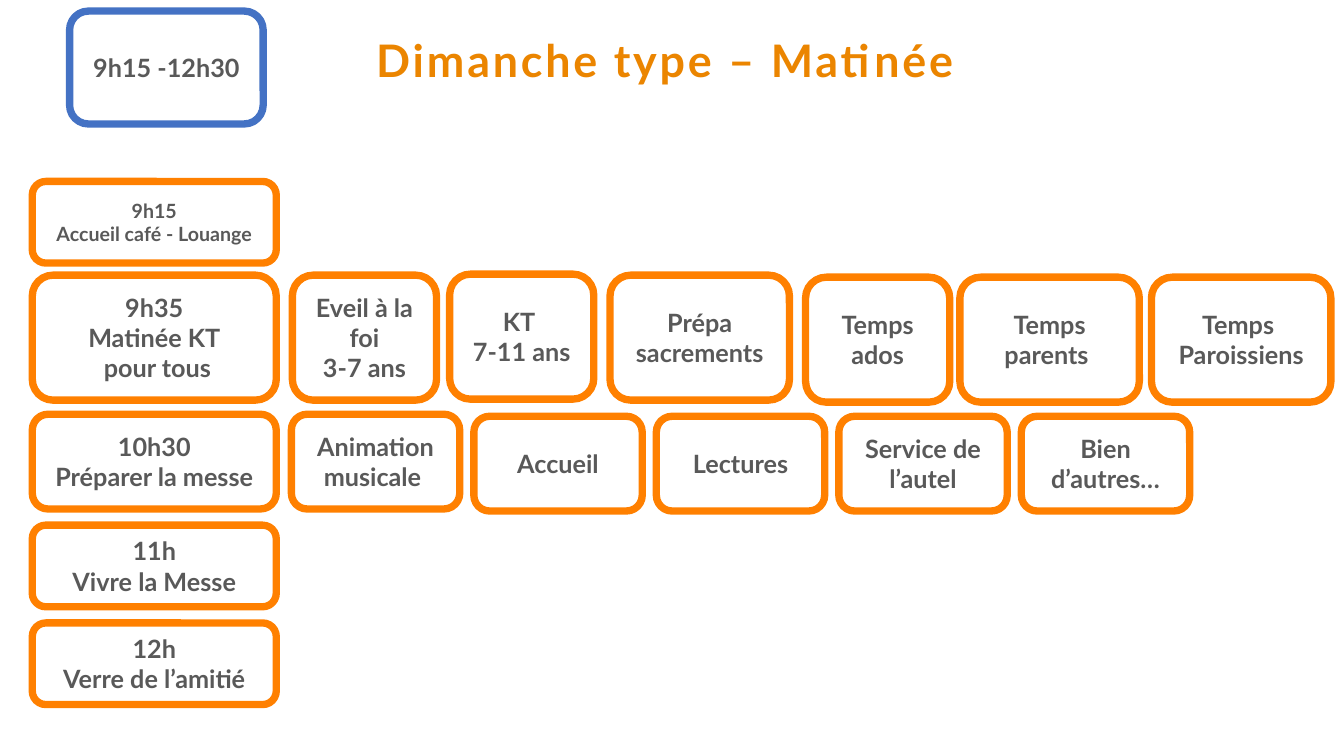
from pptx import Presentation
from pptx.dml.color import RGBColor
from pptx.enum.shapes import MSO_SHAPE
from pptx.enum.text import MSO_ANCHOR, MSO_AUTO_SIZE, PP_ALIGN
from pptx.util import Emu, Pt

PX = 9144
COLORS = {"title": "EB8500", "text": "595959", "blue": "4472C4", "orange": "FF8000"}


class Board:
    font = "Lato"
    border = Pt(5.25)

    def __init__(self, deck):
        self.slide = deck.slides.add_slide(deck.slide_layouts[5])

    def color(self, name):
        return RGBColor.from_string(COLORS[name])

    def label(self, frame, text, size, color):
        frame.text = text
        for para in frame.paragraphs:
            para.alignment = PP_ALIGN.CENTER
            for run in para.runs:
                run.font.name = self.font
                run.font.size = Pt(size)
                run.font.bold = True
                run.font.color.rgb = self.color(color)

    def title(self, text, x, y, w, h):
        shape = self.slide.shapes.title
        shape.left, shape.top, shape.width, shape.height = (Emu(n * PX) for n in (x, y, w, h))
        frame = shape.text_frame
        frame.word_wrap = True
        frame.auto_size = MSO_AUTO_SIZE.SHAPE_TO_FIT_TEXT
        frame.vertical_anchor = MSO_ANCHOR.TOP
        self.label(frame, text, 32, "title")
        para = frame.paragraphs[0]
        para.line_spacing = Pt(30)
        para.runs[0]._r.get_or_add_rPr().set("spc", "200")

    def box(self, text, x, y, w, h, size=18, line="orange"):
        shape = self.slide.shapes.add_shape(
            MSO_SHAPE.ROUNDED_RECTANGLE, *(Emu(n * PX) for n in (x, y, w, h)))
        shape.shadow.inherit = False
        shape.fill.background()
        shape.line.color.rgb = self.color(line)
        shape.line.width = self.border
        frame = shape.text_frame
        frame.word_wrap = True
        frame.vertical_anchor = MSO_ANCHOR.MIDDLE
        self.label(frame, text, size, "text")


STEPS = [
    ("9h15\nAccueil café - Louange", 180, 81, 14),
    ("9h35\nMatinée KT\n pour tous", 273, 124, 18),
    ("10h30\nPréparer la messe", 411, 94, 18),
    ("11h\nVivre la Messe", 521, 81, 18),
    ("12h\nVerre de l’amitié", 618, 81, 18),
]
GROUPS = [
    ("Eveil à la foi\n3-7 ans", 290, 273, 143),
    ("KT \v7-11 ans", 446, 272, 143),
    ("Prépa sacrements", 605, 273, 178),
    ("Temps ados", 799, 275, 143),
    ("Temps parents ", 952, 275, 178),
    ("Temps \nParoissiens", 1142, 275, 178),
]
TASKS = ["Animation musicale ", "Accueil", "Lectures", "Service de l’autel", "Bien d’autres…"]


def main():
    deck = Presentation()
    deck.slide_width, deck.slide_height = Emu(1333 * PX), Emu(750 * PX)
    board = Board(deck)
    board.title("Dimanche type – Matinée ", 0, 39, 1333, 52)
    board.box("9h15 -12h30", 69, 11, 192, 112, line="blue")
    for text, y, h, size in STEPS:
        board.box(text, 32, y, 242, h, size)
    for text, x, y, w in GROUPS:
        board.box(text, x, y, w, 124)
    for i, text in enumerate(TASKS):
        board.box(text, 289 + 181 * i, 413 if i else 411, 167, 94)
    deck.save("out.pptx")


if __name__ == "__main__":
    main()
